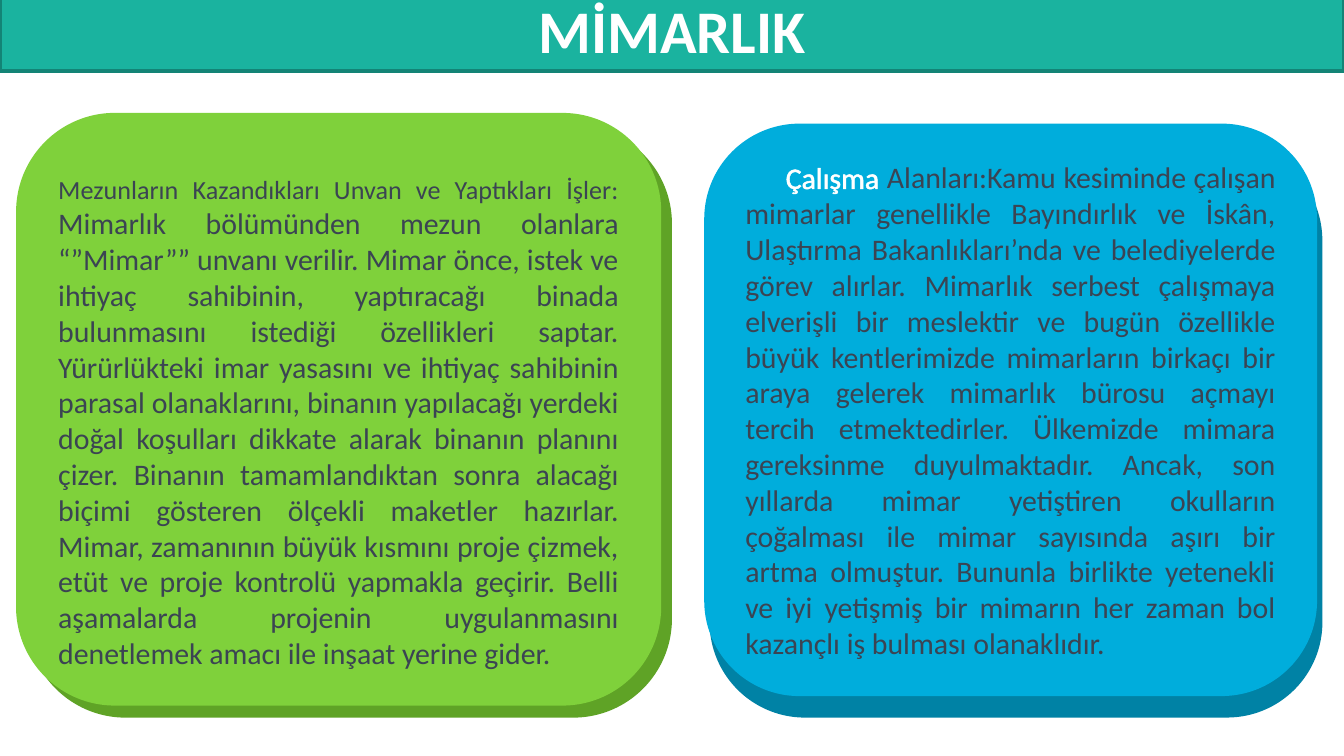
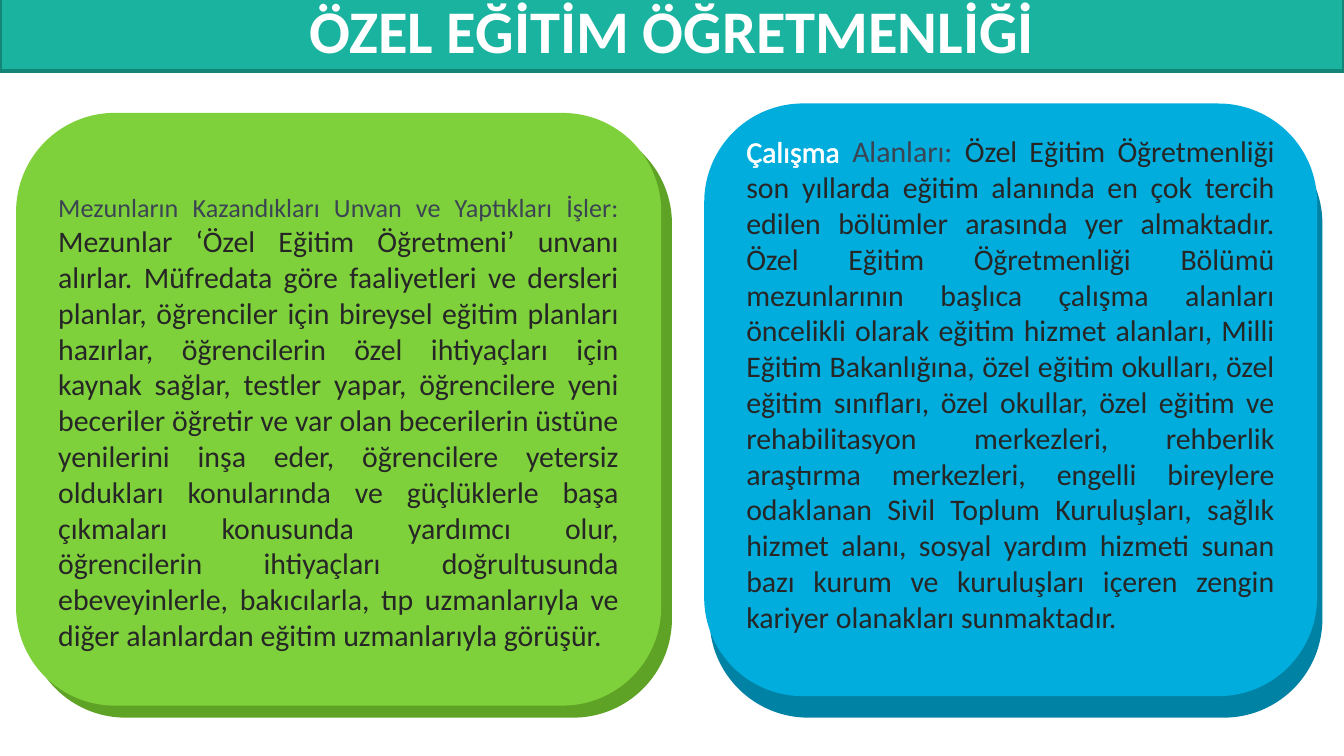
from lxml.etree import SubElement
from pptx import Presentation
from pptx.dml.color import RGBColor
from pptx.enum.shapes import MSO_SHAPE as Shape
from pptx.enum.text import MSO_ANCHOR as Anchor, PP_ALIGN as Align
from pptx.oxml.ns import qn
from pptx.util import Inches, Pt

WHITE = RGBColor(0xFF, 0xFF, 0xFF)
SLATE = RGBColor(0x3B, 0x44, 0x53)
CHARCOAL = RGBColor(0x26, 0x26, 0x26)
TEAL = RGBColor(0x1A, 0xB3, 0x9F)
DARK_TEAL = RGBColor(0x13, 0x84, 0x76)
GREEN = RGBColor(0x7F, 0xD1, 0x3B)
DARK_GREEN = RGBColor(0x5F, 0xA3, 0x26)
BLUE = RGBColor(0x00, 0xAD, 0xDC)
DARK_BLUE = RGBColor(0x00, 0x82, 0xA5)

FONT = "Calibri"
OUTLINE_WIDTH = Pt(1.45)
PAGE_WIDTH = 10
PAGE_HEIGHT = PAGE_WIDTH * 9 / 16
CARD_BOTTOM = 5.34

DUTIES_HEADING = [("Mezunların Kazandıkları Unvan ve Yaptıkları İşler: ", 14, SLATE, True)]
DUTIES_STYLE = dict(left=0.12, width=4.8, height=4.41, offset=(0.08, 0.09),
                    front=GREEN, back=DARK_GREEN, insets=(0.19, 0))
FIELDS_STYLE = dict(left=5.24, width=4.56, offset=(0.04, 0.16),
                    front=BLUE, back=DARK_BLUE)

PAGES = [
    dict(
        title="MİMARLIK",
        body_color=SLATE,
        duties="Mimarlık bölümünden mezun olanlara “”Mimar”” unvanı verilir. Mimar önce, istek ve "
               "ihtiyaç sahibinin, yaptıracağı binada bulunmasını istediği özellikleri saptar. "
               "Yürürlükteki imar yasasını ve ihtiyaç sahibinin parasal olanaklarını, binanın "
               "yapılacağı yerdeki doğal koşulları dikkate alarak binanın planını çizer. Binanın "
               "tamamlandıktan sonra alacağı biçimi gösteren ölçekli maketler hazırlar. Mimar, "
               "zamanının büyük kısmını proje çizmek, etüt ve proje kontrolü yapmakla geçirir. "
               "Belli aşamalarda projenin uygulanmasını denetlemek amacı ile inşaat yerine gider.",
        fields_heading="Alanları:",
        fields="Kamu kesiminde çalışan mimarlar genellikle Bayındırlık ve İskân, Ulaştırma "
               "Bakanlıkları’nda ve belediyelerde görev alırlar. Mimarlık serbest çalışmaya "
               "elverişli bir meslektir ve bugün özellikle büyük kentlerimizde mimarların birkaçı "
               "bir araya gelerek mimarlık bürosu açmayı tercih etmektedirler. Ülkemizde mimara "
               "gereksinme duyulmaktadır. Ancak, son yıllarda mimar yetiştiren okulların çoğalması "
               "ile mimar sayısında aşırı bir artma olmuştur. Bununla birlikte yetenekli ve iyi "
               "yetişmiş bir mimarın her zaman bol kazançlı iş bulması olanaklıdır.",
        fields_layout=dict(height=4.26, insets=(0.05, 0.05), indent=0.3),
    ),
    dict(
        title="ÖZEL EĞİTİM ÖĞRETMENLİĞİ",
        body_color=CHARCOAL,
        duties="Mezunlar ‘Özel Eğitim Öğretmeni’ unvanı alırlar. Müfredata göre faaliyetleri ve "
               "dersleri planlar, öğrenciler için bireysel eğitim planları hazırlar, öğrencilerin "
               "özel ihtiyaçları için kaynak sağlar, testler yapar, öğrencilere yeni beceriler "
               "öğretir ve var olan becerilerin üstüne yenilerini inşa eder, öğrencilere yetersiz "
               "oldukları konularında ve güçlüklerle başa çıkmaları konusunda yardımcı olur, "
               "öğrencilerin ihtiyaçları doğrultusunda ebeveyinlerle, bakıcılarla, tıp "
               "uzmanlarıyla ve diğer alanlardan eğitim uzmanlarıyla görüşür.",
        fields_heading="Alanları: ",
        fields="Özel Eğitim Öğretmenliği son yıllarda eğitim alanında en çok tercih edilen "
               "bölümler arasında yer almaktadır. Özel Eğitim Öğretmenliği Bölümü mezunlarının "
               "başlıca çalışma alanları öncelikli olarak eğitim hizmet alanları, Milli Eğitim "
               "Bakanlığına, özel eğitim okulları, özel eğitim sınıfları, özel okullar, özel "
               "eğitim ve rehabilitasyon merkezleri, rehberlik araştırma merkezleri, engelli "
               "bireylere odaklanan Sivil Toplum Kuruluşları, sağlık hizmet alanı, sosyal yardım "
               "hizmeti sunan bazı kurum ve kuruluşları içeren zengin kariyer olanakları "
               "sunmaktadır.",
        fields_layout=dict(height=4.41, insets=(0, 0.24)),
    ),
]


def add_box(shapes, kind, left, top, width, height, fill, line=None):
    box = shapes.add_shape(kind, Inches(left), Inches(top), Inches(width), Inches(height))
    box.shadow.inherit = False
    box.fill.solid()
    box.fill.fore_color.rgb = fill
    if line is None:
        box.line.fill.background()
    else:
        box.line.color.rgb = line
        box.line.width = Pt(2)
    return box


def prepare_text(box, align, side, top, bottom):
    frame = box.text_frame
    frame.word_wrap = True
    frame.vertical_anchor = Anchor.MIDDLE
    frame.margin_left = frame.margin_right = Inches(side)
    frame.margin_top, frame.margin_bottom = Inches(top), Inches(bottom)
    para = frame.paragraphs[0]
    para.alignment = align
    return para


def add_span(para, text, size, color, outlined=False, bold=False):
    span = para.add_run()
    span.text = text
    font = span.font
    font.name, font.size, font.bold = FONT, Pt(size), bold
    font.color.rgb = color
    if outlined:
        properties = span._r.get_or_add_rPr()
        outline = SubElement(properties, qn("a:ln"), w=str(OUTLINE_WIDTH))
        fill = SubElement(outline, qn("a:solidFill"))
        SubElement(fill, qn("a:srgbClr"), val=str(WHITE))
        properties.insert(0, outline)


def add_title(page, text):
    band = add_box(page.shapes, Shape.RECTANGLE, 0, -0.1, PAGE_WIDTH, 0.63, TEAL, DARK_TEAL)
    para = prepare_text(band, Align.CENTER, 0.08, 0.04, 0.04)
    add_span(para, text, 32.4, WHITE, bold=True)


def add_card(page, spans, left, width, height, offset, front, back, insets, indent=0):
    group = page.shapes.add_group_shape()
    shift_x, shift_y = offset
    top = CARD_BOTTOM - height
    add_box(group.shapes, Shape.ROUNDED_RECTANGLE, left + shift_x, top, width, height, back)
    card = add_box(group.shapes, Shape.ROUNDED_RECTANGLE, left, top - shift_y, width, height, front)
    para = prepare_text(card, Align.JUSTIFY, 0.1, *insets)
    if indent:
        para._p.get_or_add_pPr().set("indent", str(Inches(indent)))
    for span in spans:
        add_span(para, *span)


def main():
    deck = Presentation()
    deck.slide_width, deck.slide_height = Inches(PAGE_WIDTH), Inches(PAGE_HEIGHT)
    for content in PAGES:
        page = deck.slides.add_slide(deck.slide_layouts[6])
        color = content["body_color"]
        add_title(page, content["title"])
        add_card(page, DUTIES_HEADING + [(content["duties"], 16, color)], **DUTIES_STYLE)
        fields = [
            ("Çalışma ", 16, WHITE, True),
            (content["fields_heading"], 16, SLATE, True),
            (content["fields"], 16, color),
        ]
        add_card(page, fields, **FIELDS_STYLE, **content["fields_layout"])
    deck.save("out.pptx")


if __name__ == "__main__":
    main()
